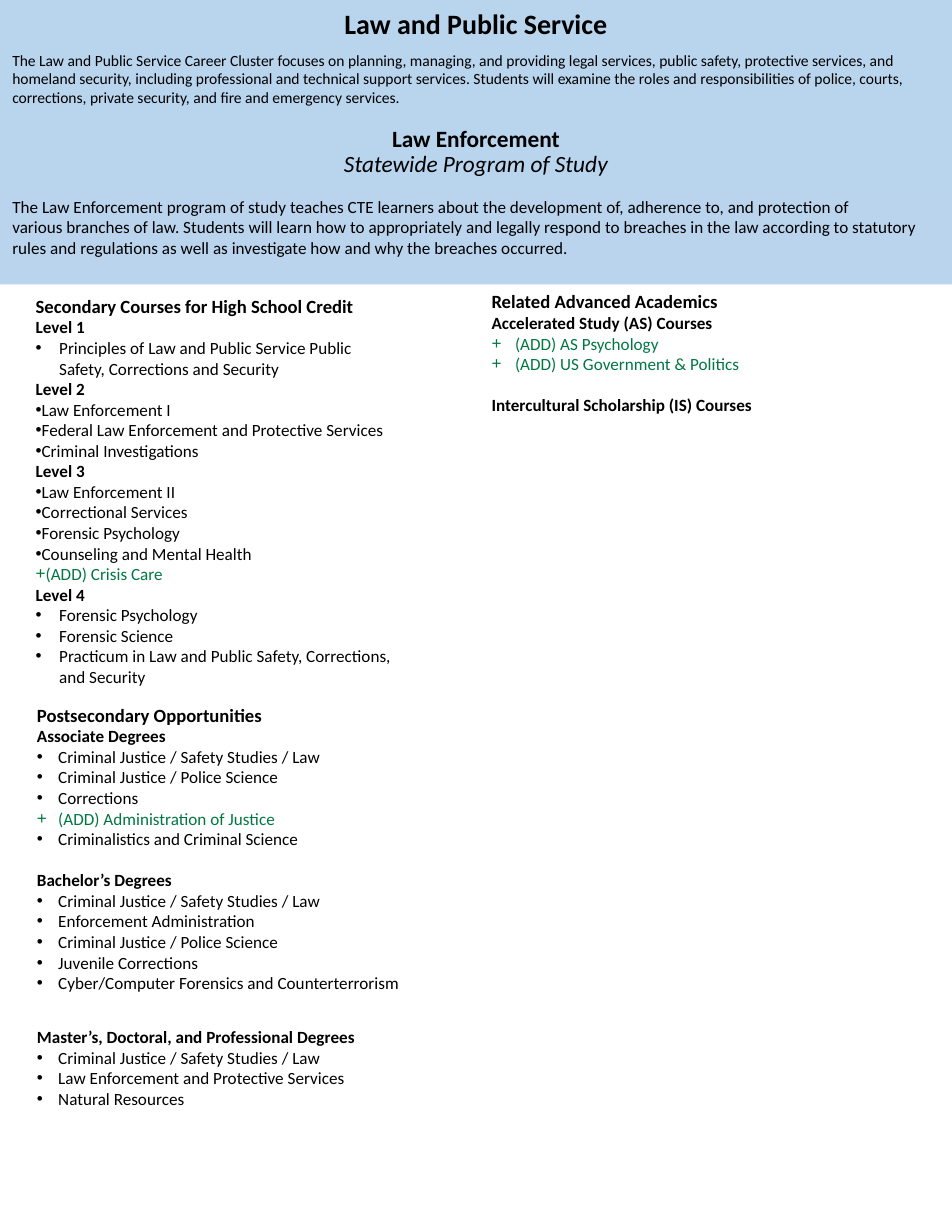
"""Build a one-page Law Enforcement program of study sheet."""
from dataclasses import dataclass

from lxml.etree import SubElement
from pptx import Presentation
from pptx.dml.color import RGBColor
from pptx.enum.shapes import MSO_SHAPE as Shape
from pptx.enum.text import MSO_ANCHOR as Anchor, PP_ALIGN as Align
from pptx.oxml.ns import qn
from pptx.util import Inches, Pt

BLACK = RGBColor(0x00, 0x00, 0x00)
GREEN = RGBColor(0x00, 0x77, 0x42)
BLUE = RGBColor(0xB9, 0xD4, 0xED)
PALE_BLUE = RGBColor(0xBA, 0xD4, 0xED)
NBSP = chr(160)
PAGE_WIDTH, PAGE_HEIGHT = 8.5, 11
COLUMN_WIDTH = 3.98


@dataclass
class Line:
    text: str
    size: float = 11
    bold: bool = False
    italic: bool = False
    color: RGBColor = BLACK
    bullet: str = ""
    margin: float = 0
    hanging: float = 0
    before: float = 0
    after: float = 0
    spacing: float = 1
    align: Align = Align.LEFT


@dataclass
class Band:
    top: float
    height: float
    fill: RGBColor
    lines: list[Line]
    anchor: Anchor = Anchor.TOP


@dataclass
class Column:
    left: float
    top: float
    height: float
    lines: list[Line]
    inset: tuple[float, float] = (0.1, 0.05)


def heading(text: str) -> Line:
    return Line(text, size=12, bold=True)


def level(text: str, before: float = 0) -> Line:
    return Line(text, bold=True, before=before)


def items(*texts: str, margin: float = 0.21, hanging: float = 0.21) -> list[Line]:
    return [
        Line(text, margin=margin, hanging=hanging,
             bullet="+" if text.startswith("(ADD)") else "•",
             color=GREEN if text.startswith("(ADD)") else BLACK)
        for text in texts
    ]


def flush_items(*texts: str) -> list[Line]:
    return items(*texts, margin=0)


def degree_items(*texts: str) -> list[Line]:
    return items(*texts, margin=0.19, hanging=0.19)


def write_lines(frame, lines: list[Line], inset: tuple[float, float]) -> None:
    frame.word_wrap = True
    frame.margin_left = frame.margin_right = Inches(inset[0])
    frame.margin_top = frame.margin_bottom = Inches(inset[1])
    for index, line in enumerate(lines):
        para = frame.add_paragraph() if index else frame.paragraphs[0]
        para.alignment = line.align
        para.line_spacing = line.spacing
        para.space_before, para.space_after = Pt(line.before), Pt(line.after)
        font = para.font
        font.name, font.size = "Calibri", Pt(line.size)
        font.bold, font.italic = line.bold, line.italic
        font.color.rgb = line.color
        span = para.add_run()
        span.text = line.text
        if line.bullet:
            add_bullet(para, line)


def add_bullet(para, line: Line) -> None:
    properties = para._p.get_or_add_pPr()
    properties.set("marL", str(Inches(line.margin)))
    properties.set("indent", str(-Inches(line.hanging)))
    bullet_font = SubElement(properties, qn("a:buFont"))
    bullet_font.set("typeface", "Arial")
    bullet = SubElement(properties, qn("a:buChar"))
    bullet.set("char", line.bullet)
    defaults = properties.find(qn("a:defRPr"))
    properties.append(defaults)


def draw_band(page, band: Band) -> None:
    box = page.shapes.add_shape(Shape.RECTANGLE, 0, Inches(band.top),
                                Inches(PAGE_WIDTH), Inches(band.height))
    box.shadow.inherit = False
    box.fill.solid()
    box.fill.fore_color.rgb = band.fill
    box.line.fill.background()
    box.text_frame.vertical_anchor = band.anchor
    write_lines(box.text_frame, band.lines, (0.11, 0.06))


def draw_column(page, column: Column) -> None:
    box = page.shapes.add_textbox(Inches(column.left), Inches(column.top),
                                  Inches(COLUMN_WIDTH), Inches(column.height))
    write_lines(box.text_frame, column.lines, column.inset)


BANDS = [
    Band(1.01, 0.7, BLUE, [
        Line("Law Enforcement", 15, bold=True, spacing=0.9, align=Align.CENTER),
        Line("Statewide Program of Study", 15, italic=True, spacing=0.9, align=Align.CENTER),
    ], Anchor.MIDDLE),
    Band(0, 1.02, BLUE, [
        Line("Law and Public Service", 18, bold=True, after=6.6, align=Align.CENTER),
        Line("The Law and Public Service Career Cluster focuses on planning, managing, and "
             "providing legal services, public safety, protective services, and homeland "
             "security, including professional and technical support services. Students will "
             "examine the roles and responsibilities of police, courts, corrections, private "
             "security, and fire and emergency services.", 10),
    ]),
    Band(1.69, 0.85, PALE_BLUE, [
        Line("The Law Enforcement program of study teaches CTE learners about the development "
             f"of, adherence to, and protection of various{NBSP}branches of law. Students will "
             "learn how to appropriately and legally respond to breaches in the law according "
             f"to statutory rules and{NBSP}regulations as well as investigate how and why the "
             "breaches occurred."),
    ]),
]

COLUMNS = [
    Column(0.22, 2.58, 3.68, [
        heading("Secondary Courses for High School Credit"),
        level("Level 1"),
        *items("Principles of Law and Public Service Public "
               f"Safety,{NBSP}Corrections and Security"),
        level("Level 2"),
        *flush_items("Law Enforcement I", "Federal Law Enforcement and Protective Services",
                     "Criminal Investigations"),
        level("Level 3"),
        *flush_items("Law Enforcement II", "Correctional Services", "Forensic Psychology",
                     "Counseling and Mental Health", "(ADD) Crisis Care"),
        level("Level 4"),
        *items("Forensic Psychology", "Forensic Science",
               f"Practicum in Law and Public Safety, Corrections, and{NBSP}Security"),
    ]),
    Column(4.29, 2.54, 1.52, [
        heading("Related Advanced Academics"),
        level("Accelerated Study (AS) Courses"),
        *items("(ADD) AS Psychology", "(ADD) US Government & Politics"),
        level("Intercultural Scholarship (IS) Courses", before=13.3),
    ]),
    Column(0.22, 6.22, 3.68, [
        heading("Postsecondary Opportunities"),
        level("Associate Degrees"),
        *degree_items("Criminal Justice / Safety Studies / Law",
                      "Criminal Justice / Police Science", "Corrections",
                      "(ADD) Administration of Justice", "Criminalistics and Criminal Science"),
        level("Bachelor’s Degrees", before=13.3),
        *degree_items("Criminal Justice / Safety Studies / Law", "Enforcement Administration",
                      "Criminal Justice / Police Science", "Juvenile Corrections",
                      "Cyber/Computer Forensics and Counterterrorism"),
        level("Master’s, Doctoral, and Professional Degrees", before=21.5),
        *degree_items("Criminal Justice / Safety Studies / Law",
                      "Law Enforcement and Protective Services", "Natural Resources"),
    ], (0.11, 0.06)),
]


def main() -> None:
    deck = Presentation()
    deck.slide_width, deck.slide_height = Inches(PAGE_WIDTH), Inches(PAGE_HEIGHT)
    page = deck.slides.add_slide(deck.slide_layouts[6])
    for band in BANDS:
        draw_band(page, band)
    for column in COLUMNS:
        draw_column(page, column)
    deck.save("out.pptx")


if __name__ == "__main__":
    main()
